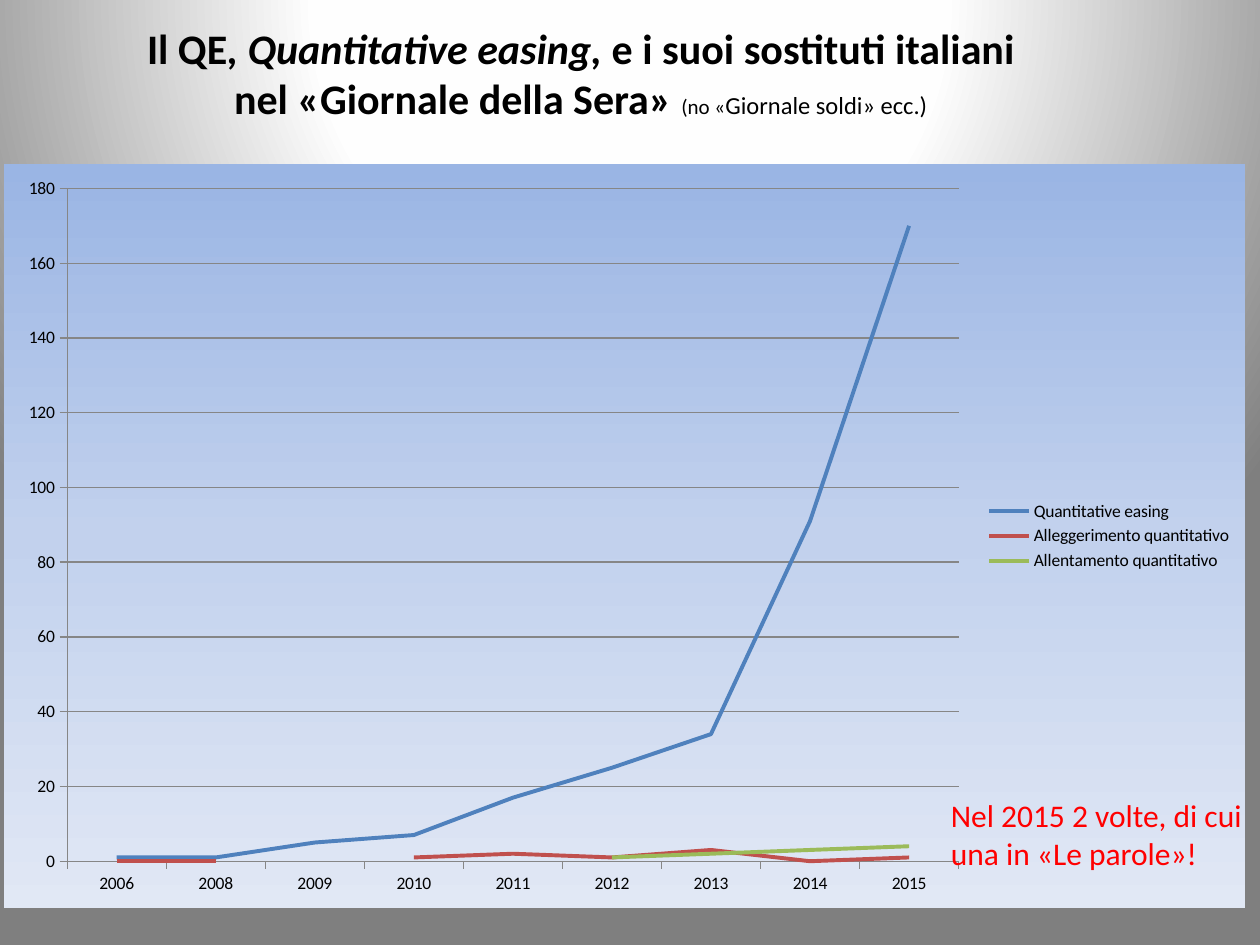
import pptx
import pptx.chart.data
import pptx.dml.color
import pptx.enum.chart
import pptx.enum.text
import pptx.oxml
import pptx.oxml.ns
import pptx.util
from pptx.util import Cm

RGBColor = pptx.dml.color.RGBColor
BLACK = RGBColor(0x00, 0x00, 0x00)
RED = RGBColor(0xFF, 0x00, 0x00)
GREY = RGBColor(0x86, 0x86, 0x86)
BLUE = RGBColor(0x4F, 0x81, 0xBD)
BRICK = RGBColor(0xC0, 0x50, 0x4D)
GREEN = RGBColor(0x9B, 0xBB, 0x59)
PAGE_STOPS = [(0, RGBColor(0xFF, 0xFF, 0xFF)), (40, RGBColor(0xFE, 0xFE, 0xFE)),
              (100, RGBColor(0x7F, 0x7F, 0x7F))]
CHART_STOPS = [(0, RGBColor(0x9A, 0xB5, 0xE4)), (50, RGBColor(0xC2, 0xD1, 0xED)),
               (100, RGBColor(0xE1, 0xE8, 0xF5))]
FONT = "Calibri"

YEARS = ["2006", "2008", "2009", "2010", "2011", "2012", "2013", "2014", "2015"]
SERIES = [
    ("Quantitative easing", BLUE, [1, 1, 5, 7, 17, 25, 34, 91, 170]),
    ("Alleggerimento quantitativo", BRICK, [0, 0, None, 1, 2, 1, 3, 0, 1]),
    ("Allentamento quantitativo", GREEN, [None, None, 1, None, None, 1, 2, 3, 4]),
]

# Each paragraph is a list of (text, size, bold, italic)
TITLE = [
    [("Il QE", 24, True, False), (", Quantitative easing, ", 24, True, True),
     ("e i suoi sostituti italiani", 24, True, False)],
    [("nel «Giornale della Sera» ", 24, True, False), ("(no «", 12, False, False),
     ("Giornale soldi» ecc.)", 14, False, False)],
]
NOTE = [[("Nel 2015 2 volte, di cui", 18, False, False)],
        [("una in «Le parole»!", 18, False, False)]]


def gradient_xml(stops, direction):
    stop_xml = "".join(
        f'<a:gs pos="{position * 1000}"><a:srgbClr val="{color}"/></a:gs>'
        for position, color in stops)
    return f'<a:gradFill rotWithShape="1"><a:gsLst>{stop_xml}</a:gsLst>{direction}</a:gradFill>'


def paint_background(page):
    """Radial gradient centred above the page."""
    direction = ('<a:path path="circle"><a:fillToRect l="50000" t="-80000" '
                 'r="50000" b="180000"/></a:path>')
    background = pptx.oxml.parse_xml(
        f'<p:bg {pptx.oxml.ns.nsdecls("p", "a")}><p:bgPr>'
        f'{gradient_xml(PAGE_STOPS, direction)}<a:effectLst/></p:bgPr></p:bg>')
    page.element[0].insert(0, background)


def add_text(page, box, paragraphs, color, alignment):
    frame = page.shapes.add_textbox(*box).text_frame
    frame.word_wrap = True
    frame.auto_size = pptx.enum.text.MSO_AUTO_SIZE.SHAPE_TO_FIT_TEXT
    for index, spans in enumerate(paragraphs):
        para = frame.add_paragraph() if index else frame.paragraphs[0]
        para.alignment = alignment
        for text, size, bold, italic in spans:
            span = para.add_run()
            span.text = text
            span.font.name = FONT
            span.font.size = pptx.util.Pt(size)
            span.font.bold = bold
            span.font.italic = italic
            span.font.color.rgb = color


def style_line(line, color, width):
    line.color.rgb = color
    line.width = pptx.util.Pt(width)


def add_line_chart(page, box):
    data = pptx.chart.data.CategoryChartData()
    data.categories = YEARS
    for name, _, values in SERIES:
        data.add_series(name, values)
    chart = page.shapes.add_chart(
        pptx.enum.chart.XL_CHART_TYPE.LINE, *box, data).chart
    chart.has_title = False
    chart.font.name = FONT
    chart.font.size = pptx.util.Pt(10)
    chart.font.color.rgb = BLACK

    chart.has_legend = True
    chart.legend.position = pptx.enum.chart.XL_LEGEND_POSITION.RIGHT
    chart.legend.include_in_layout = False

    for axis in (chart.category_axis, chart.value_axis):
        axis.major_tick_mark = pptx.enum.chart.XL_TICK_MARK.OUTSIDE
        style_line(axis.format.line, GREY, 0.75)
    chart.value_axis.has_major_gridlines = True
    style_line(chart.value_axis.major_gridlines.format.line, GREY, 0.75)

    chart.plots[0].vary_by_categories = False
    for series, (_, color, _) in zip(chart.plots[0].series, SERIES):
        series.smooth = False
        series.marker.style = pptx.enum.chart.XL_MARKER_STYLE.NONE
        style_line(series.format.line, color, 2.25)

    fill = gradient_xml(CHART_STOPS, '<a:lin ang="5400000" scaled="0"/>')
    area = pptx.oxml.parse_xml(
        f'<c:spPr {pptx.oxml.ns.nsdecls("c", "a")}>{fill}'
        '<a:ln><a:noFill/></a:ln></c:spPr>')
    chart.element.find(pptx.oxml.ns.qn("c:chart")).addnext(area)


def main():
    deck = pptx.Presentation()
    deck.slide_width, deck.slide_height = Cm(25.4), Cm(19.05)
    page = deck.slides.add_slide(deck.slide_layouts[6])
    align = pptx.enum.text.PP_ALIGN
    paint_background(page)
    add_text(page, (Cm(2.31), Cm(0.33), Cm(18.8), Cm(2.31)), TITLE, BLACK, align.CENTER)
    add_line_chart(page, (Cm(0.08), Cm(3.3), Cm(25.02), Cm(15.01)))
    add_text(page, (Cm(18.92), Cm(15.93), Cm(6.4), Cm(1.8)), NOTE, RED, align.LEFT)
    deck.save("out.pptx")


if __name__ == "__main__":
    main()
